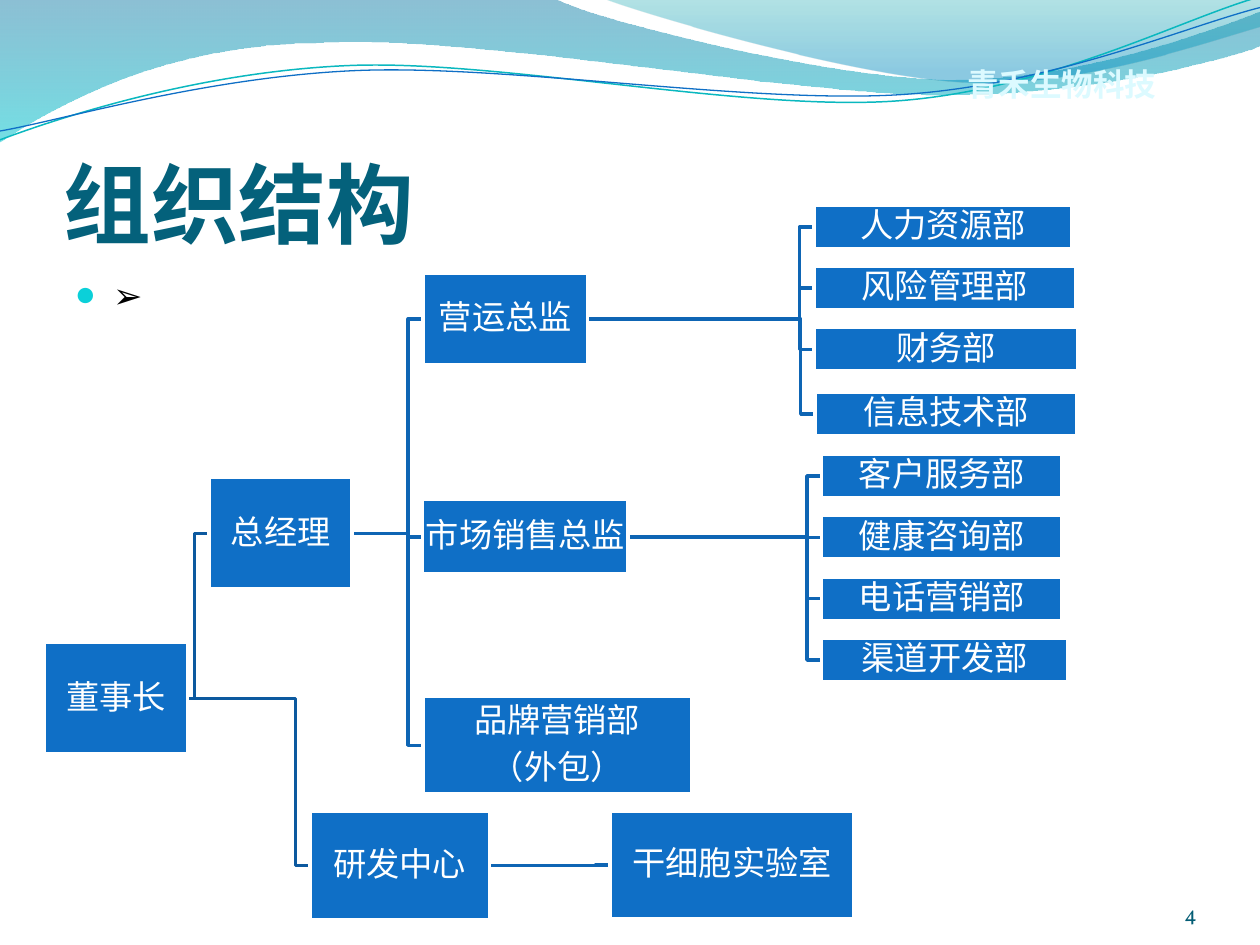
from dataclasses import dataclass
from math import cos, radians, sin

from lxml import etree
from pptx import Presentation
from pptx.dml.color import RGBColor
from pptx.enum.shapes import MSO_SHAPE
from pptx.enum.text import MSO_ANCHOR, PP_ALIGN
from pptx.oxml.ns import qn
from pptx.util import Inches, Pt

RECT = MSO_SHAPE.RECTANGLE
TOP, MIDDLE, BOTTOM = MSO_ANCHOR.TOP, MSO_ANCHOR.MIDDLE, MSO_ANCHOR.BOTTOM
LEFT, CENTER, RIGHT = PP_ALIGN.LEFT, PP_ALIGN.CENTER, PP_ALIGN.RIGHT

COLS, ROWS, CELL = 100, 75, 0.1  # grid of 0.1 inch cells
ELBOW = 1.15                     # columns from a bend to the box after it
TILT = 2.7                       # degrees the wave lines lean to the left
SERIF, SANS, CJK = "Vollkorn", "Calibri", "Noto Sans CJK SC"
COLORS = {
    "box": "0F6FC6", "white": "FFFFFF", "black": "000000", "link": "0E65B4",
    "root_link": "0C599F", "title": "04617B", "number": "045D75",
    "bullet": "0BD0D9", "company": "DCFAFF", "wave_teal": "0AB8BF",
    "band_top": "0074A1", "band_bottom": "00C6CF",
    "crest_top": "00A1A9", "crest_bottom": "008BBF",
}


@dataclass
class Node:
    text: str
    col: float
    row: float
    cols: float
    rows: float
    parent: str = ""

    @property
    def middle(self) -> float:
        return self.row + self.rows / 2


@dataclass
class Stop:
    color: str
    position: float
    opacity: int


@dataclass
class Wave:
    """Each segment holds one point for a line or three for a Bézier curve."""
    start: tuple
    segments: list
    stops: tuple = ()
    line: str = ""
    width: float = 0
    pivot: tuple = ()


@dataclass
class Label:
    text: str
    box: tuple
    size: float
    font: str
    color: str
    align: int = LEFT
    anchor: int = TOP
    bold: bool = False
    margins: tuple = (1, 0.5, 1, 0.5)


WAVES = [
    Wave((0, -0.1), [
        [(44, -0.1)],
        [(47.6, 1.7), (66.4, 6.3), (75.8, 6.3)],
        [(85.3, 6.3), (95.8, 2.6), (100, 0.9)],
        [(100.1, 3.6)],
        [(98.3, 4.4), (87, 7.6), (74.6, 7.5)],
        [(62.2, 7.5), (38.2, 2.8), (25.7, 3.4)],
        [(12.9, 3.5), (4.6, 8.3), (-0.1, 11.3)],
    ], stops=(Stop("band_top", 0, 45), Stop("band_bottom", 1, 55))),
    Wave((47.9, -0.1), [
        [(50.9, 1.1), (68.2, 6.2), (76.9, 6.5)],
        [(85.6, 6.9), (96.1, 3.2), (100, 2.1)],
        [(100, 0)],
    ], stops=(Stop("crest_top", 0, 30), Stop("crest_bottom", 0.8, 45))),
    Wave((0, 11.1), [
        [(4.8, 9.3), (15.8, 5.7), (27.7, 5.2)],
        [(39.5, 4.7), (59.3, 8.9), (71.3, 8)],
        [(83.3, 7.1), (93.8, 1.5), (99.8, -0.2)],
    ], line="wave_teal", width=0.85, pivot=(49.9, 5.75)),
    Wave((0, 10.4), [
        [(4.7, 9.6), (16.4, 6.1), (28.3, 5.6)],
        [(40.3, 5.1), (59.7, 8.3), (71.7, 7.5)],
        [(83.6, 6.7), (94.1, 2.1), (100, 0.6)],
    ], line="box", width=0.75, pivot=(49.95, 5.9)),
]

CHAIR, MANAGER, OPERATIONS, SALES, RESEARCH = "董事长", "总经理", "营运总监", "市场销售总监", "研发中心"
OPERATIONS_TEAMS = [("人力资源部", 64.6, 16.3, 20.5), ("风险管理部", 64.6, 21.15, 20.75),
                    ("财务部", 64.6, 26, 20.95), ("信息技术部", 64.7, 31.15, 20.75)]
SALES_TEAMS = [("客户服务部", 19.1), ("健康咨询部", 19.1), ("电话营销部", 19.1), ("渠道开发部", 19.55)]
NODES = [
    Node(CHAIR, 3.53, 51, 11.35, 8.85),
    Node(MANAGER, 16.6, 37.9, 11.35, 8.85, CHAIR),
    Node(OPERATIONS, 33.55, 21.7, 13.1, 7.25, MANAGER),
    *[Node(name, col, row, cols, 3.45, OPERATIONS) for name, col, row, cols in OPERATIONS_TEAMS],
    Node(SALES, 33.55, 39.65, 16.3, 5.9, MANAGER),
    *[Node(name, 65.2, 36.05 + 4.87 * i, cols, 3.45, SALES)
      for i, (name, cols) in enumerate(SALES_TEAMS)],
    Node("品牌营销部\n（外包）", 33.55, 55.3, 21.35, 7.7, MANAGER),
    Node(RESEARCH, 24.6, 64.4, 14.25, 8.6, CHAIR),
    Node("干细胞实验室", 48.4, 64.4, 19.4, 8.5, RESEARCH),
]

TITLE = Label("组织结构", (5.05, 7.7, 90, 12.5), 50, SANS, "title", anchor=BOTTOM, bold=True,
              margins=(0, 0.5, 0, 0))
BODY = Label("➢", (5, 21.2, 90, 48), 20, SERIF, "black")
NUMBER = Label("4", (86.7, 69.5, 8.3, 4), 12, SERIF, "number", RIGHT, BOTTOM, margins=(0,) * 4)
COMPANY = Label("青禾生物科技", (69.7, 4.7, 29.1, 4), 18, CJK, "company", CENTER, bold=True)


def cells(n: float) -> int:
    return Inches(n * CELL)


def rgb(name: str) -> RGBColor:
    return RGBColor.from_string(COLORS[name])


def add_run(p, text: str, size: float, font: str, color: str, bold: bool = False) -> None:
    r = p.add_run()
    r.text = text
    r.font.size, r.font.name, r.font.bold = Pt(size), font, bold
    r.font.color.rgb = rgb(color)
    etree.SubElement(r.font._element, qn("a:ea"), typeface=CJK)


def set_frame(tf, anchor: int, margins: tuple) -> None:
    tf.word_wrap = True
    tf.vertical_anchor = anchor
    tf.margin_left, tf.margin_top, tf.margin_right, tf.margin_bottom = map(cells, margins)


def add_label(s, label: Label):
    tf = s.shapes.add_textbox(*map(cells, label.box)).text_frame
    set_frame(tf, label.anchor, label.margins)
    p = tf.paragraphs[0]
    p.alignment = label.align
    add_run(p, label.text, label.size, label.font, label.color, label.bold)
    return p


def add_bullet(p) -> None:
    p.space_before = Pt(4)
    pPr = p._p.get_or_add_pPr()
    pPr.set("marL", str(cells(3)))
    pPr.set("indent", str(-cells(3)))
    color = etree.SubElement(pPr, qn("a:buClr"))
    etree.SubElement(color, qn("a:srgbClr"), val=COLORS["bullet"])
    etree.SubElement(pPr, qn("a:buSzPct"), val="95000")
    etree.SubElement(pPr, qn("a:buFont"), typeface=SANS)
    etree.SubElement(pPr, qn("a:buChar"), char="●")


def add_outline(s, points: list, close: bool = False):
    (x, y), *rest = [(cells(x), cells(y)) for x, y in points]
    builder = s.shapes.build_freeform(x, y)
    builder.add_line_segments(rest, close=close)
    sp = builder.convert_to_shape()
    sp.shadow.inherit = False
    sp.fill.background()
    return sp


def turn(point: tuple, pivot: tuple) -> tuple:
    """Turn a point clockwise by TILT, which the shape's rotation then undoes."""
    dx, dy, a = point[0] - pivot[0], point[1] - pivot[1], radians(TILT)
    return pivot[0] + dx * cos(a) - dy * sin(a), pivot[1] + dx * sin(a) + dy * cos(a)


def bend_segments(sp, segments: list) -> None:
    """Merge each three line points of a curved segment into one Bézier curve."""
    lines = iter(list(sp._element.iter(qn("a:lnTo"))))
    for segment in segments:
        parts = [next(lines) for _ in segment]
        if len(parts) == 3:
            first, *others = parts
            first.tag = qn("a:cubicBezTo")
            for part in others:
                first.append(part[0])
                part.getparent().remove(part)


def add_wave(s, wave: Wave) -> None:
    points = [wave.start] + [point for segment in wave.segments for point in segment]
    if wave.pivot:
        points = [turn(point, wave.pivot) for point in points]
    sp = add_outline(s, points, close=bool(wave.stops))
    bend_segments(sp, wave.segments)
    if wave.line:
        sp.rotation = 360 - TILT
        set_line(sp, wave.line, wave.width)
        return
    sp.line.fill.background()
    sp.fill.gradient()
    sp.fill.gradient_angle = 270
    for target, stop in zip(sp.fill.gradient_stops, wave.stops):
        target.color.rgb = rgb(stop.color)
        target.position = stop.position
        color = target._gs.find(qn("a:srgbClr"))
        etree.SubElement(color, qn("a:alpha"), val=str(stop.opacity * 1000))


def set_line(sp, color: str, width: float) -> None:
    sp.line.color.rgb = rgb(color)
    sp.line.width = Pt(width)


def add_node(s, node: Node) -> None:
    sp = s.shapes.add_shape(RECT, *map(cells, (node.col, node.row, node.cols, node.rows)))
    sp.shadow.inherit = False
    sp.fill.solid()
    sp.fill.fore_color.rgb = rgb("box")
    set_line(sp, "white", 2)
    tf = sp.text_frame
    set_frame(tf, MIDDLE, (0.1,) * 4)
    for i, text in enumerate(node.text.split("\n")):
        p = tf.add_paragraph() if i else tf.paragraphs[0]
        p.alignment, p.line_spacing, p.space_after = CENTER, 0.9, Pt(6.65)
        add_run(p, text, 19, SERIF, "white")


def add_link(s, parent: Node, child: Node) -> None:
    start, bend = parent.col + parent.cols, child.col - ELBOW
    link = add_outline(s, [(start, parent.middle), (bend, parent.middle),
                           (bend, child.middle), (child.col, child.middle)])
    set_line(link, "link" if parent.parent else "root_link", 2)


def main() -> None:
    prs = Presentation()
    prs.slide_width, prs.slide_height = cells(COLS), cells(ROWS)
    s = prs.slides.add_slide(prs.slide_layouts[6])
    for wave in WAVES:
        add_wave(s, wave)
    add_label(s, TITLE)
    add_bullet(add_label(s, BODY))
    add_label(s, NUMBER)
    by_name = {node.text: node for node in NODES}
    for node in reversed(NODES[1:]):
        add_link(s, by_name[node.parent], node)
    for node in NODES:
        add_node(s, node)
    add_label(s, COMPANY)
    prs.save("out.pptx")


if __name__ == "__main__":
    main()
